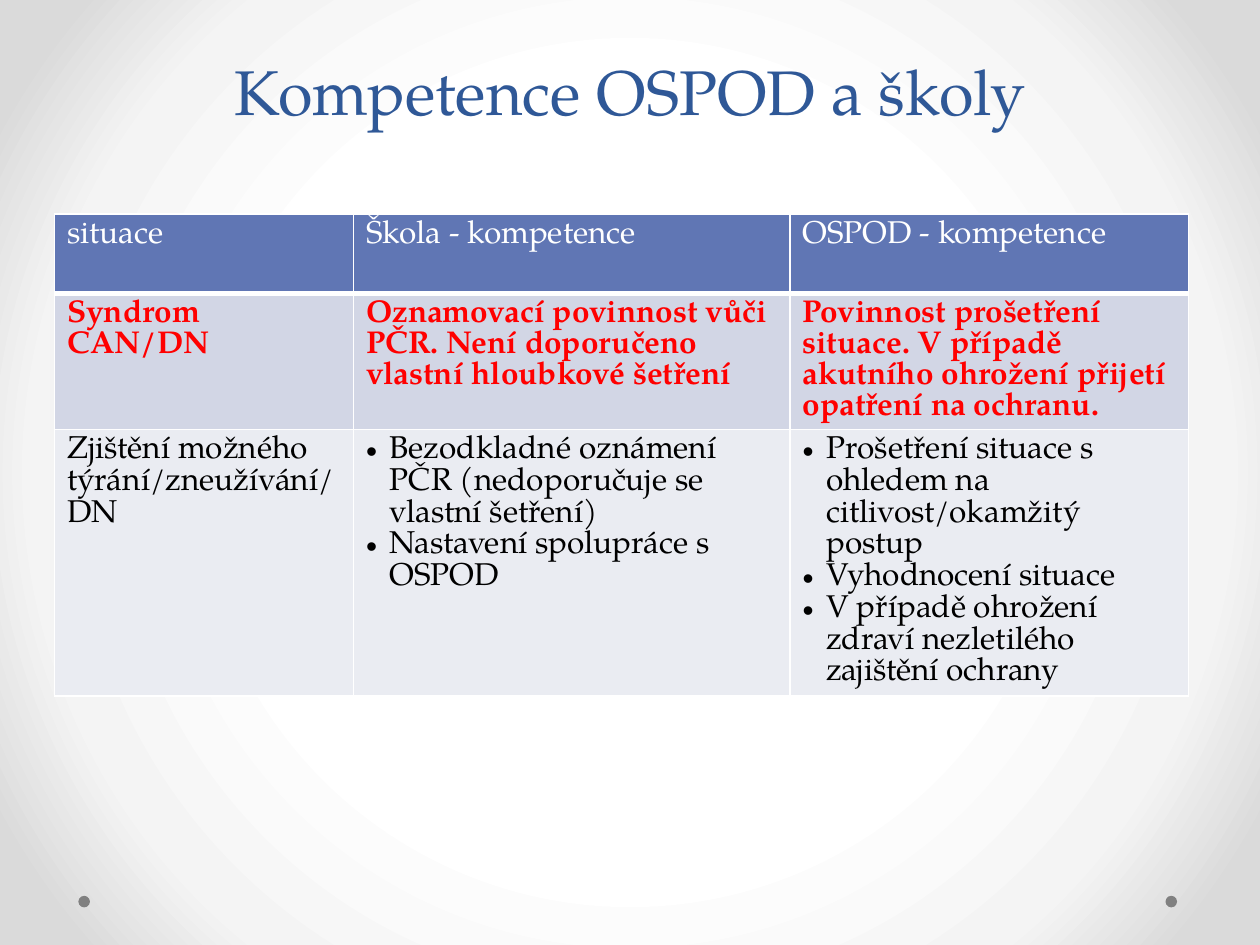
from lxml import etree
from pptx import Presentation
from pptx.dml.color import RGBColor
from pptx.enum.shapes import MSO_SHAPE
from pptx.enum.text import MSO_ANCHOR, MSO_AUTO_SIZE, PP_ALIGN
from pptx.oxml import parse_xml
from pptx.oxml.ns import qn
from pptx.util import Pt

BOTTOM, CENTER, OVAL = MSO_ANCHOR.BOTTOM, PP_ALIGN.CENTER, MSO_SHAPE.OVAL
NO_AUTOFIT = MSO_AUTO_SIZE.NONE
FONT = "TeX Gyre Pagella"
TITLE_ONLY = 5
WHITE = "FFFFFF"
NAMESPACES = (
    'xmlns:p="http://schemas.openxmlformats.org/presentationml/2006/main" '
    'xmlns:a="http://schemas.openxmlformats.org/drawingml/2006/main"'
)
BACKGROUND_STOPS = [(50, WHITE), (76, "F4F4F4"), (92, "DADADA")]

COLUMN_WIDTHS = [170.8, 249.4, 227.8]
ROW_HEIGHTS = [45.4, 68.4, 118.8]
ROW_STYLES = [
    {"fill": "6076B4", "color": WHITE, "bold": False, "bottom": 3},
    {"fill": "D2D6E5", "color": "FF0000", "bold": True, "bottom": 1},
    {"fill": "EAECF2", "color": "000000", "bold": False, "bottom": 1},
]
# A cell given as a list is bulleted
ROWS = [
    ["situace", "Škola - kompetence", "OSPOD - kompetence"],
    [
        "Syndrom CAN/DN",
        "Oznamovací povinnost vůči PČR. Není doporučeno vlastní hloubkové šetření",
        "Povinnost prošetření situace. V případě akutního ohrožení přijetí "
        "opatření na ochranu.",
    ],
    [
        "Zjištění možného týrání/zneužívání/DN",
        [
            "Bezodkladné oznámení PČR (nedoporučuje se vlastní šetření)",
            "Nastavení spolupráce s OSPOD",
        ],
        [
            "Prošetření situace s ohledem na citlivost/okamžitý postup",
            "Vyhodnocení situace",
            "V případě ohrožení zdraví nezletilého zajištění ochrany",
        ],
    ],
]


def rgb(value):
    return RGBColor.from_string(value)


def set_attributes(target, values):
    for name, value in values.items():
        setattr(target, name, value)


def format_font(font, size, color, bold=False):
    set_attributes(font, {"name": FONT, "size": Pt(size), "bold": bold})
    font.color.rgb = rgb(color)


def set_background(slide):
    stops = "".join(
        f'<a:gs pos="{position * 1000}"><a:srgbClr val="{color}"/></a:gs>'
        for position, color in BACKGROUND_STOPS
    )
    background = parse_xml(
        f"<p:bg {NAMESPACES}><p:bgPr><a:gradFill><a:gsLst>{stops}</a:gsLst>"
        '<a:path path="circle"><a:fillToRect l="50000" t="50000" r="50000" '
        'b="50000"/></a:path></a:gradFill><a:effectLst/></p:bgPr></p:bg>'
    )
    slide.element.cSld.insert(0, background)


def add_dot(slide, left):
    dot = slide.shapes.add_shape(OVAL, Pt(left), Pt(511.9), Pt(6.6), Pt(6.6))
    dot.shadow.inherit = False
    dot.fill.solid()
    dot.fill.fore_color.rgb = rgb("808080")
    dot.line.fill.background()


def set_title(slide, text):
    title = slide.shapes.title
    set_attributes(
        title, {"left": Pt(36), "top": Pt(0), "width": Pt(648), "height": Pt(77)}
    )
    frame = title.text_frame
    frame.text = text
    set_attributes(
        frame,
        {"vertical_anchor": BOTTOM, "word_wrap": True, "auto_size": NO_AUTOFIT},
    )
    paragraph = frame.paragraphs[0]
    set_attributes(paragraph, {"alignment": CENTER, "line_spacing": Pt(58)})
    format_font(paragraph.runs[0].font, 36, "2F5897")


def add_bullet(paragraph):
    properties = paragraph._p.get_or_add_pPr()
    indent = Pt(13.5)
    properties.set("marL", str(indent))
    properties.set("indent", str(-indent))
    font = etree.SubElement(properties, qn("a:buFont"))
    font.set("typeface", "Arial")
    etree.SubElement(properties, qn("a:buChar")).set("char", "•")


def set_borders(cell, bottom):
    properties = cell._tc.get_or_add_tcPr()
    widths = {"lnL": 1, "lnR": 1, "lnT": 1, "lnB": bottom}
    for index, (side, width) in enumerate(widths.items()):
        border = parse_xml(
            f'<a:{side} {NAMESPACES} w="{Pt(width)}"><a:solidFill>'
            f'<a:srgbClr val="{WHITE}"/></a:solidFill></a:{side}>'
        )
        properties.insert(index, border)


def fill_cell(cell, content, style):
    bulleted = isinstance(content, list)
    cell.text = "\n".join(content) if bulleted else content
    for paragraph in cell.text_frame.paragraphs:
        format_font(paragraph.runs[0].font, 18, style["color"], style["bold"])
        if bulleted:
            add_bullet(paragraph)
    cell.fill.solid()
    cell.fill.fore_color.rgb = rgb(style["fill"])
    set_borders(cell, style["bottom"])


def add_competence_table(slide):
    table = slide.shapes.add_table(
        len(ROWS), len(COLUMN_WIDTHS), Pt(31.2), Pt(122.4),
        Pt(sum(COLUMN_WIDTHS)), Pt(sum(ROW_HEIGHTS)),
    ).table
    set_attributes(table, {"first_row": False, "horz_banding": False})
    for column, width in zip(table.columns, COLUMN_WIDTHS):
        column.width = Pt(width)
    for row, height, contents, style in zip(
        table.rows, ROW_HEIGHTS, ROWS, ROW_STYLES
    ):
        row.height = Pt(height)
        for cell, content in zip(row.cells, contents):
            fill_cell(cell, content, style)


def main():
    presentation = Presentation()
    set_attributes(
        presentation, {"slide_width": Pt(720), "slide_height": Pt(540)}
    )
    slide = presentation.slides.add_slide(presentation.slide_layouts[TITLE_ONLY])
    set_background(slide)
    # Decorative dots in the bottom corners
    for left in (666, 44.8):
        add_dot(slide, left)
    set_title(slide, "Kompetence OSPOD a školy")
    add_competence_table(slide)
    presentation.save("out.pptx")


if __name__ == "__main__":
    main()
